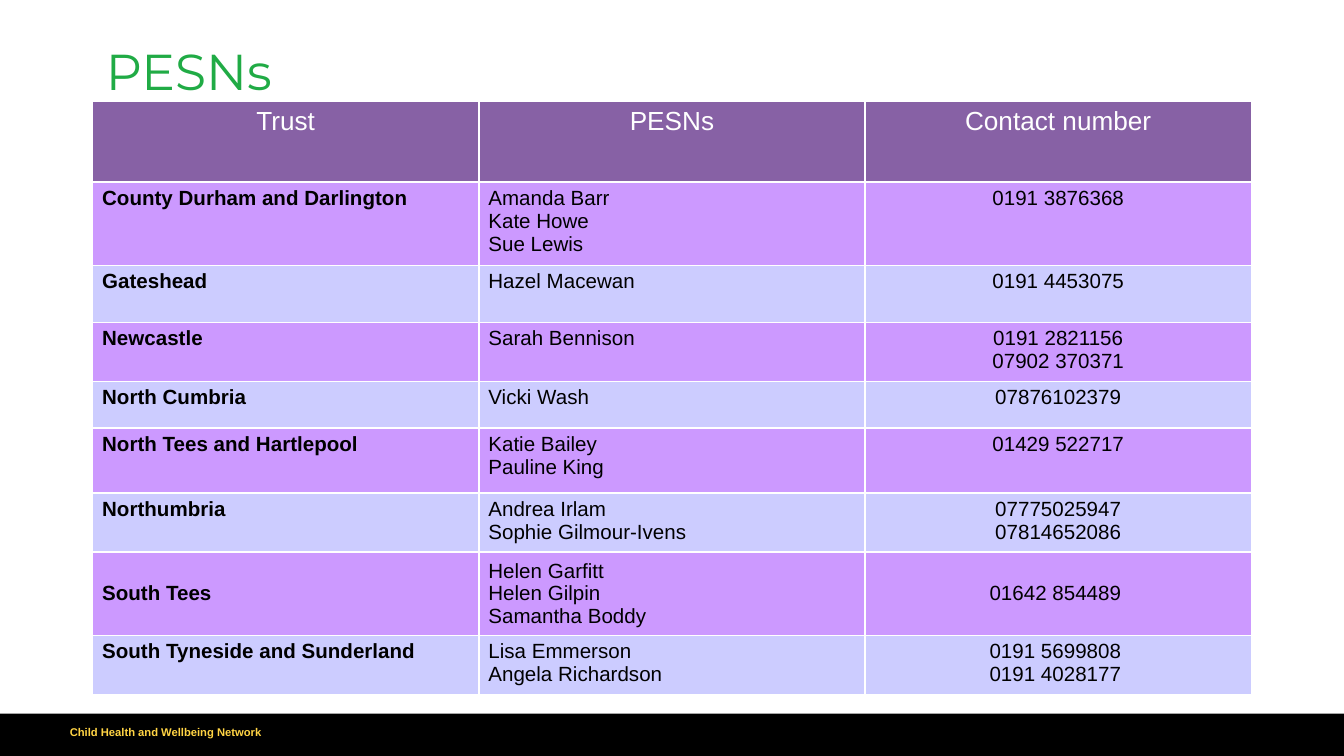
from lxml.etree import SubElement
from pptx import Presentation
from pptx.dml.color import RGBColor
from pptx.enum.shapes import MSO_SHAPE as Shape
from pptx.enum.text import MSO_ANCHOR as Anchor, PP_ALIGN as Align
from pptx.oxml.ns import qn
from pptx.util import Cm, Pt


def color(hex_string):
    return RGBColor.from_string(hex_string)


def write(frame, lines, hex_color, align=Align.LEFT, spacing=None, **font):
    """Fill a text frame with one paragraph per line."""
    frame.word_wrap = True
    for number, line in enumerate(lines):
        paragraph = frame.paragraphs[0] if number == 0 else frame.add_paragraph()
        paragraph.alignment = align
        paragraph.line_spacing = spacing
        run = paragraph.add_run()
        run.text = line
        run.font.color.rgb = color(hex_color)
        for name, value in font.items():
            setattr(run.font, name, value)


prs = Presentation()
prs.slide_width, prs.slide_height = Cm(25.4), Cm(14.29)
slide = prs.slides.add_slide(prs.slide_layouts[6])
shapes = slide.shapes

# Footer band
footer = shapes.add_shape(Shape.RECTANGLE, 0, Cm(13.49), prs.slide_width, Cm(0.8))
footer.shadow.inherit = False
footer.fill.solid()
footer.fill.fore_color.rgb = color("000000")
footer.line.fill.background()
network = shapes.add_textbox(Cm(1.07), Cm(13.61), Cm(5.87), Cm(0.61))
write(network.text_frame, ["Child Health and Wellbeing Network"], "FFD444",
      spacing=0.9, name="Arial", size=Pt(6), bold=True)

# Title
title = shapes.add_textbox(Cm(1.75), Cm(0.76), Cm(21.9), Cm(1.47))
write(title.text_frame, ["PESNs"], "20AB45",
      spacing=0.9, name="Montserrat", size=Pt(27))

# Contacts: row height in cm, trust, nurses, numbers
contacts = [
    (1.52, ["Trust"], ["PESNs"], ["Contact number"]),
    (1.52, ["County Durham and Darlington"],
     ["Amanda Barr", "Kate Howe", "Sue Lewis"], ["0191 3876368"]),
    (1.08, ["Gateshead"], ["Hazel Macewan"], ["0191 4453075"]),
    (1.08, ["Newcastle"], ["Sarah Bennison"], ["0191 2821156", "07902 370371"]),
    (0.88, ["North Cumbria"], ["Vicki Wash"], ["07876102379"]),
    (1.23, ["North Tees and Hartlepool"],
     ["Katie Bailey", "Pauline King"], ["01429 522717"]),
    (1.08, ["Northumbria"], ["Andrea Irlam", "Sophie Gilmour-Ivens"],
     ["07775025947", "07814652086"]),
    (1.52, ["South Tees"],
     ["Helen Garfitt", "Helen Gilpin", "Samantha Boddy"], ["01642 854489 "]),
    (1.08, ["South Tyneside and Sunderland"],
     ["Lisa Emmerson", "Angela Richardson"], ["0191 5699808 ", "0191 4028177 "]),
]
cell_format = {
    "margin_left": Cm(0.18), "margin_right": Cm(0.18),
    "margin_top": Cm(0.09), "margin_bottom": Cm(0.09),
}
column_width = Cm(7.3)
table = shapes.add_table(len(contacts), 3, Cm(1.75), Cm(1.92),
                         3 * column_width, Cm(10.99)).table
for column in table.columns:
    column.width = column_width

for row, (height, *entries) in enumerate(contacts):
    table.rows[row].height = Cm(height)
    is_header = row == 0
    fill = "8761A5" if is_header else ("CCCCFF", "CC99FF")[row % 2]
    for col, lines in enumerate(entries):
        cell = table.cell(row, col)
        for name, value in cell_format.items():
            setattr(cell, name, value)
        centred = is_header or col == 2
        write(cell.text_frame, lines, "FFFFFF" if is_header else "000000",
              align=Align.CENTER if centred else Align.LEFT, name="Arial",
              size=Pt(14 if is_header else 11), bold=not is_header and col == 0)
        if entries[0] == ["South Tees"]:
            cell.vertical_anchor = Anchor.MIDDLE

        # White borders come before the fill in the cell properties
        properties = cell._tc.get_or_add_tcPr()
        for side in ("a:lnL", "a:lnR", "a:lnT", "a:lnB"):
            border = SubElement(properties, qn(side), w=str(Pt(1)))
            solid = SubElement(border, qn("a:solidFill"))
            SubElement(solid, qn("a:srgbClr"), val="FFFFFF")
        cell.fill.solid()
        cell.fill.fore_color.rgb = color(fill)

prs.save("out.pptx")
